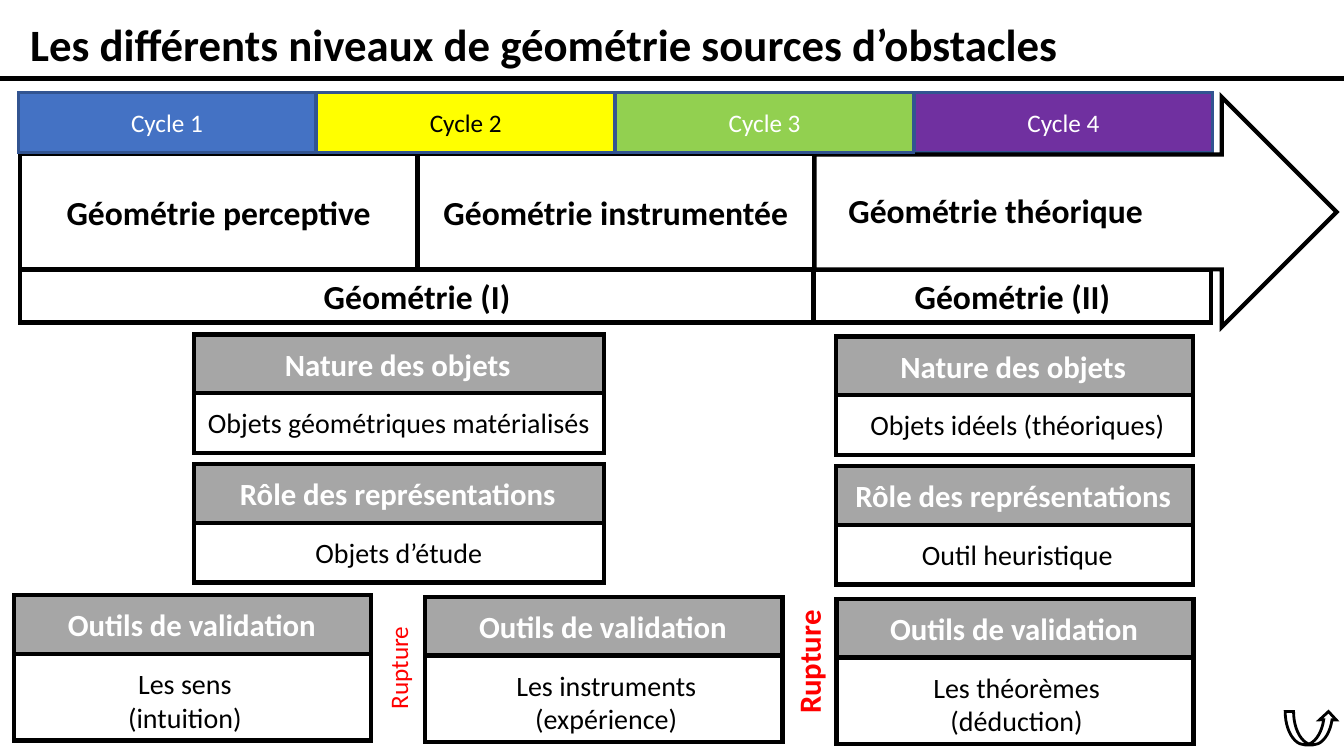
import pptx
import pptx.util
import pptx.dml.color
import pptx.enum.shapes
import pptx.enum.text
import pptx.oxml
import pptx.oxml.ns
from dataclasses import dataclass

Cm = pptx.util.Cm
Pt = pptx.util.Pt
Shape = pptx.enum.shapes.MSO_SHAPE
Align = pptx.enum.text.PP_ALIGN
Anchor = pptx.enum.text.MSO_ANCHOR
NS = pptx.oxml.ns.nsdecls("a")


def rgb(code):
    return pptx.dml.color.RGBColor.from_string(code)


@dataclass
class Theme:
    font: str = "Calibri"
    black: str = "000000"
    white: str = "FFFFFF"
    red: str = "FF0000"
    grey: str = "A6A6A6"
    blue: str = "4472C4"
    navy: str = "325491"
    yellow: str = "FFFF00"
    green: str = "92D050"
    purple: str = "7030A0"
    title: int = 32
    level: int = 24
    head: int = 22
    body: int = 20
    small: int = 18
    thick: int = 3
    thin: int = 2


class Deck:
    """Holds the theme and the current slide; all lengths are centimetres."""

    def __init__(self, theme):
        self.theme = theme
        self.file = pptx.Presentation()
        self.file.slide_width = Cm(33.87)
        self.file.slide_height = Cm(19.05)
        self.slide = self.file.slides.add_slide(self.file.slide_layouts[6])

    def letter(self, frame, text, size, color, bold=False,
               align=Align.CENTER, anchor=Anchor.MIDDLE):
        """Fill a text frame, one paragraph for each line of text."""
        frame.word_wrap = True
        frame.vertical_anchor = anchor
        form = {"name": self.theme.font, "size": Pt(size), "bold": bold}
        for i, line in enumerate(text.split("\n")):
            para = frame.add_paragraph() if i else frame.paragraphs[0]
            para.alignment = align
            run = para.add_run()
            run.text = line
            for key, value in form.items():
                setattr(run.font, key, value)
            run.font.color.rgb = rgb(color)

    def shape(self, box, kind=Shape.RECTANGLE, fill=None, edge=None, width=None):
        item = self.slide.shapes.add_shape(kind, *map(Cm, box))
        item.shadow.inherit = False
        if fill:
            item.fill.solid()
            item.fill.fore_color.rgb = rgb(fill)
        else:
            item.fill.background()
        item.line.color.rgb = rgb(edge or self.theme.black)
        item.line.width = Pt(width or self.theme.thick)
        item.line._get_or_add_ln().append(
            pptx.oxml.parse_xml(f'<a:miter {NS} lim="800000"/>'))
        return item

    def label(self, box, text, size, color, anchor=Anchor.TOP, **form):
        item = self.slide.shapes.add_textbox(*map(Cm, box))
        self.letter(item.text_frame, text, size, color, anchor=anchor, **form)
        return item

    def upright(self, box, text, size, bold):
        """Add red text that reads from bottom to top."""
        item = self.label(box, text, size, self.theme.red, Anchor.MIDDLE, bold=bold)
        item.text_frame._txBody.bodyPr.set("vert", "vert270")

    def rule(self, top):
        line = self.slide.shapes.add_connector(
            pptx.enum.shapes.MSO_CONNECTOR.STRAIGHT, 0, Cm(top),
            self.file.slide_width, Cm(top))
        line.line.color.rgb = rgb(self.theme.black)
        line.line.width = Pt(self.theme.thick)
        line._element.spPr.append(pptx.oxml.parse_xml(f"<a:effectLst {NS}/>"))

    def cycle(self, num, fill, color):
        theme = self.theme
        item = self.shape((0.46 + (num - 1) * 7.53, 2.34, 7.5, 1.5),
                          fill=fill, edge=theme.navy, width=theme.thin)
        self.letter(item.text_frame, f"Cycle {num}", theme.small, color)

    def level(self, box, text):
        item = self.shape(box)
        self.letter(item.text_frame, text, self.theme.level, self.theme.black, bold=True)

    def card(self, left, top, width, head, body, shift):
        """Stack a grey heading on a white box; shift moves the lower text sideways."""
        theme = self.theme
        tall = "\n" in body
        self.shape((left, top, width, 1.48), fill=theme.grey)
        self.label((left - 0.05, top + 0.15, width + 0.05, 1.19), head,
                   theme.head, theme.white, bold=True)
        self.shape((left, top + 1.48, width, 2.18 if tall else 1.5))
        self.label((left + shift, top + 1.67, width, 1.96 if tall else 1.12),
                   body, theme.body, theme.black)


def main():
    theme = Theme()
    deck = Deck(theme)

    deck.cycle(4, theme.purple, theme.white)
    arrow = deck.shape((24.21, -1.24, 5.79, 13.16), Shape.DOWN_ARROW)
    arrow.rotation = 270
    deck.label((21.13, 4.67, 9.07, 1.27), "Géométrie théorique",
               theme.level, theme.black, bold=True, align=Align.LEFT)

    deck.level((0.51, 3.89, 10, 2.9), "Géométrie perceptive")
    deck.level((10.52, 3.89, 10, 2.9), "Géométrie instrumentée")
    deck.cycle(1, theme.blue, theme.white)
    deck.cycle(2, theme.yellow, theme.black)
    deck.cycle(3, theme.green, theme.white)
    deck.level((0.51, 6.81, 20, 1.32), "Géométrie (I)")
    deck.level((20.5, 6.81, 10.03, 1.32), "Géométrie (II)")

    deck.label((0.51, 0.3, 33.35, 1.6), "Les différents niveaux de géométrie sources d’obstacles",
               theme.title, theme.black, bold=True, align=Align.LEFT)
    deck.rule(1.98)

    nature, role, tools = "Nature des objets", "Rôle des représentations", "Outils de validation"
    cards = [
        (4.88, 8.43, 10.34, nature, "Objets géométriques matérialisés", 0),
        (21.06, 8.48, 9, nature, "Objets idéels (théoriques)", 0.08),
        (4.88, 11.7, 10.34, role, "Objets d’étude", 0),
        (21.06, 11.75, 9, role, "Outil heuristique", 0.08),
        (0.36, 15, 9, tools, "Les sens\n(intuition)", -0.2),
        (10.72, 15.04, 9, tools, "Les instruments\n(expérience)", 0.06),
        (21.08, 15.09, 9, tools, "Les théorèmes\n(déduction)", 0.04),
    ]
    for card in cards:
        deck.card(*card)

    deck.upright((9.55, 15.11, 0.97, 3.45), "Rupture", theme.small, False)
    deck.upright((19.89, 14.96, 0.97, 3.45), "Rupture", theme.head, True)
    deck.shape((32.39, 17.93, 1.3, 0.84), Shape.CURVED_UP_ARROW, width=theme.thin)

    deck.file.save("out.pptx")


if __name__ == "__main__":
    main()
